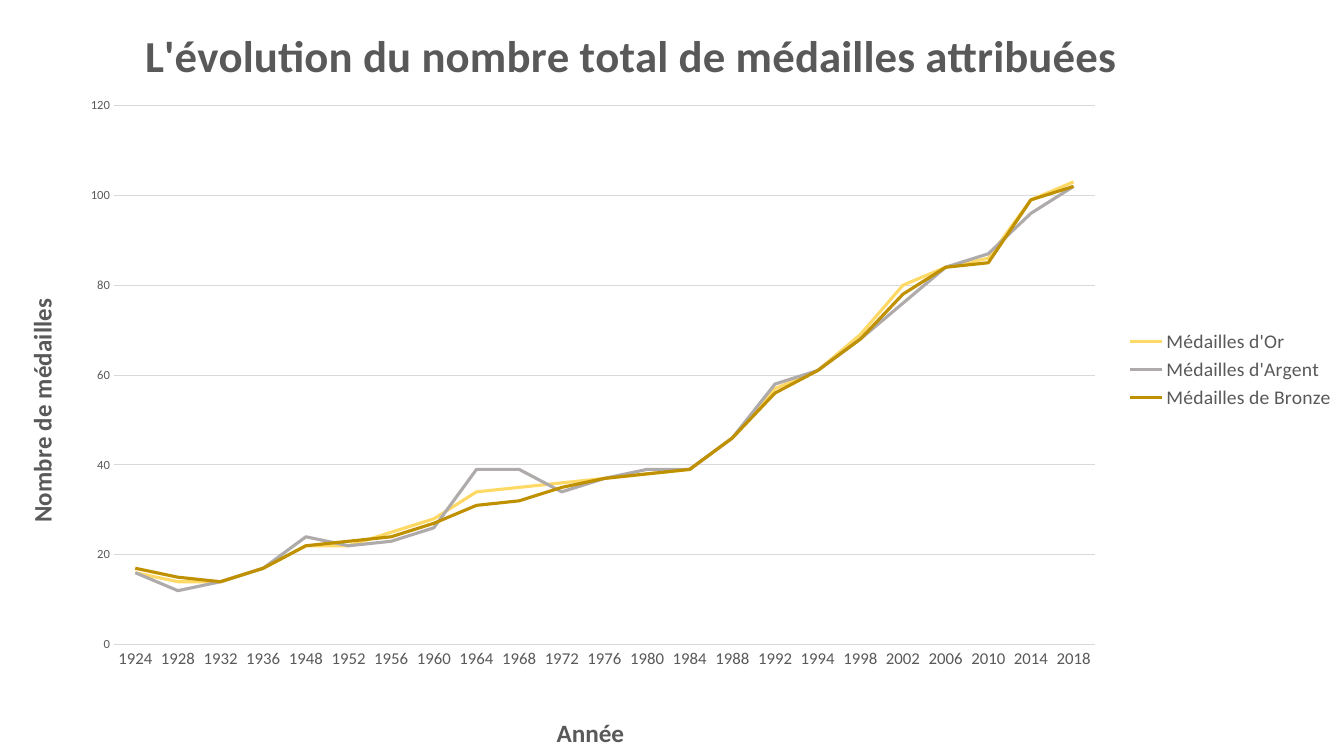
import pptx
import pptx.chart.data
import pptx.dml.color
import pptx.enum.chart
import pptx.oxml
import pptx.oxml.ns
import pptx.util

WIDTH, HEIGHT = 1344, 756
EMU_PER_PX = 9071.43
GREY, LIGHT_GREY = "595959", "D9D9D9"

YEARS = [*range(1924, 1937, 4), *range(1948, 1993, 4), *range(1994, 2019, 4)]
MEDALS = [
    ("Médailles d'Or", "FFD966",
     [16, 14, 14, 17, 22, 22, 25, 28, 34, 35, 36, 37, 38, 39, 46, 57, 61, 69, 80, 84, 86, 99, 103]),
    ("Médailles d'Argent", "AFABAB",
     [16, 12, 14, 17, 24, 22, 23, 26, 39, 39, 34, 37, 39, 39, 46, 58, 61, 68, 76, 84, 87, 96, 102]),
    ("Médailles de Bronze", "BF9000",
     [17, 15, 14, 17, 22, 23, 24, 27, 31, 32, 35, 37, 38, 39, 46, 56, 61, 68, 78, 84, 85, 99, 102]),
]


def px(n):
    return pptx.util.Emu(round(n * EMU_PER_PX))


def rgb(value):
    return pptx.dml.color.RGBColor.from_string(value)


class ChartSlide:
    def __init__(self, prs, font="Calibri"):
        self.font = font
        self.slide = prs.slides.add_slide(prs.slide_layouts[6])

    def style(self, font, size, bold=False):
        font.name, font.size, font.bold = self.font, pptx.util.Pt(size), bold
        font.color.rgb = rgb(GREY)

    def line(self, line, color, width):
        line.color.rgb, line.width = rgb(color), pptx.util.Pt(width)

    def line_chart(self, left, top, width, height, categories, series):
        data = pptx.chart.data.CategoryChartData()
        data.categories = [str(c) for c in categories]
        for name, _, values in series:
            data.add_series(name, values)
        chart = self.slide.shapes.add_chart(
            pptx.enum.chart.XL_CHART_TYPE.LINE,
            px(left), px(top), px(width), px(height), data).chart
        self.style(chart.font, 10)
        chart.plots[0].vary_by_categories = False
        for s, (_, color, _) in zip(chart.plots[0].series, series):
            s.smooth = False
            self.line(s.format.line, color, 2.25)
        return chart

    def title(self, owner, text, size):
        """Title a chart or an axis, which is given as the title object itself."""
        p = owner.text_frame.paragraphs[0]
        p.add_run().text = text
        self.style(p.font, size, True)
        self.style(p.runs[0].font, size, True)

    def axis(self, axis, size):
        axis.major_tick_mark = axis.minor_tick_mark = pptx.enum.chart.XL_TICK_MARK.NONE
        self.style(axis.tick_labels.font, size)

    def legend(self, chart, size):
        chart.has_legend = True
        chart.legend.position = pptx.enum.chart.XL_LEGEND_POSITION.RIGHT
        chart.legend.include_in_layout = False
        self.style(chart.legend.font, size)

    def place(self, chart, part, left, top, width=None, height=None):
        """Fix a chart part, found by its XML path, at a position in px."""
        qn = pptx.oxml.ns.qn
        el = chart.element.xpath(part)[0]
        for old in el.findall(qn("c:layout")):
            el.remove(old)
        inner = '<c:layoutTarget val="inner"/>' if width else ""
        sizes = [("x", left, WIDTH), ("y", top, HEIGHT)]
        if width:
            sizes += [("w", width, WIDTH), ("h", height, HEIGHT)]
        modes = "".join(f'<c:{k}Mode val="edge"/>' for k in "xy")
        values = "".join(f'<c:{k} val="{n / full:.4f}"/>' for k, n, full in sizes)
        layout = pptx.oxml.parse_xml(
            f'<c:layout {pptx.oxml.ns.nsdecls("c")}><c:manualLayout>'
            f"{inner}{modes}{values}</c:manualLayout></c:layout>")
        leading = [c for c in el if c.tag in (qn("c:tx"), qn("c:legendPos"))]
        el.insert(len(leading), layout)


def main():
    prs = pptx.Presentation()
    prs.slide_width, prs.slide_height = px(WIDTH), px(HEIGHT)
    page = ChartSlide(prs)
    chart = page.line_chart(0, 0, WIDTH, HEIGHT, YEARS, MEDALS)
    years, counts = chart.category_axis, chart.value_axis

    page.axis(years, 12)
    page.line(years.format.line, LIGHT_GREY, 0.75)
    page.axis(counts, 9)
    counts.format.line.fill.background()
    counts.minimum_scale, counts.maximum_scale, counts.major_unit = 0, 120, 20
    page.line(counts.major_gridlines.format.line, LIGHT_GREY, 0.75)

    chart.has_title = True
    page.title(chart.chart_title, "L'évolution du nombre total de médailles attribuées", 32)
    page.title(years.axis_title, "Année", 18)
    page.title(counts.axis_title, "Nombre de médailles", 18)
    body = chart.element.xpath(".//c:valAx/c:title//a:bodyPr")[0]
    body.set("rot", "-5400000")
    body.set("vert", "horz")
    page.legend(chart, 14)

    page.place(chart, "./c:chart/c:title", 137, 17)
    page.place(chart, ".//c:catAx/c:title", 552, 720)
    page.place(chart, ".//c:valAx/c:title", 20, 301)
    page.place(chart, ".//c:legend", 1124, 330)
    page.place(chart, ".//c:plotArea", 114, 107, 981, 546)
    prs.save("out.pptx")


if __name__ == "__main__":
    main()
